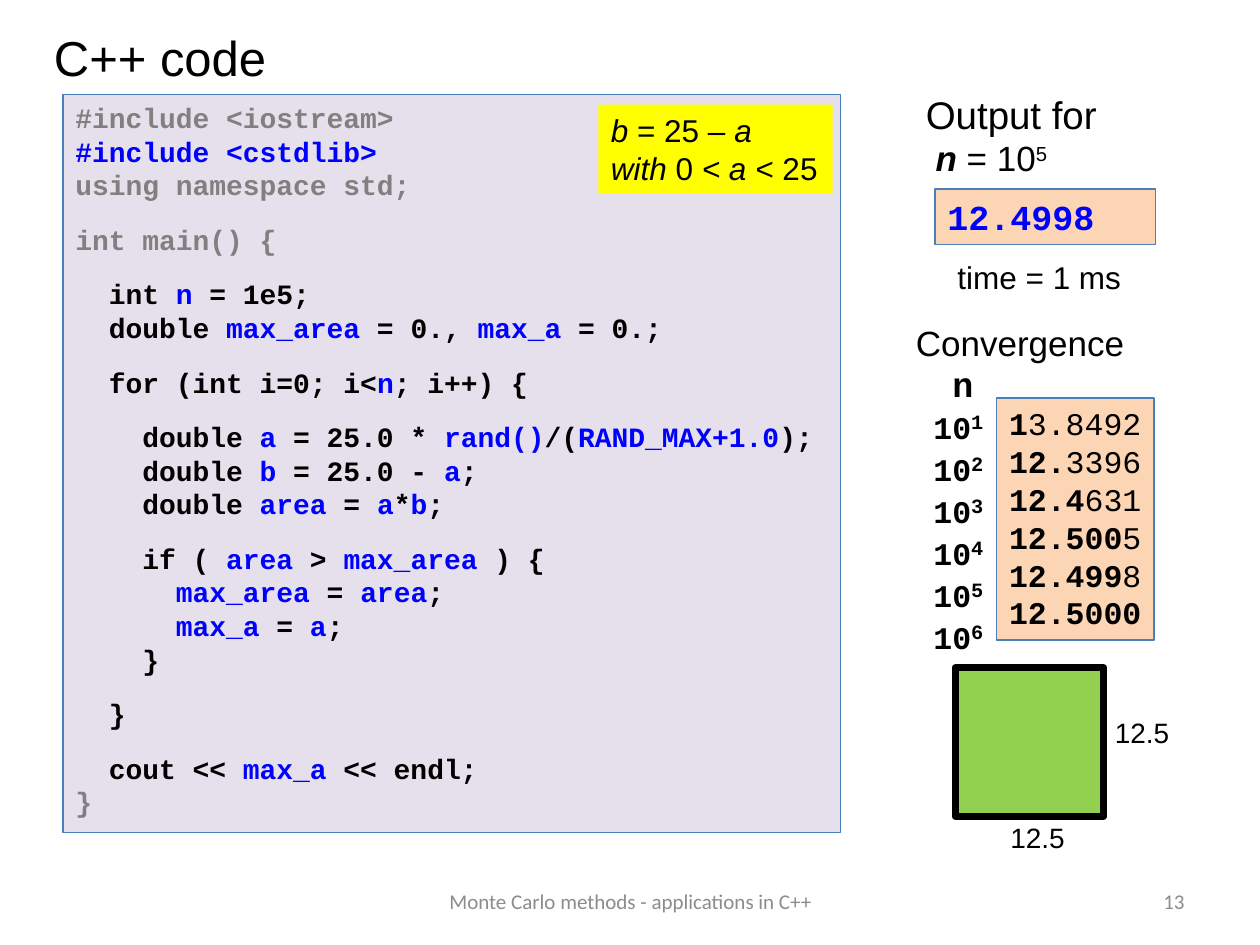
from pptx import Presentation
from pptx.dml.color import RGBColor
from pptx.enum.shapes import MSO_SHAPE
from pptx.enum.text import MSO_ANCHOR, PP_ALIGN
from pptx.util import Inches, Pt

RECT = MSO_SHAPE.RECTANGLE
LEFT, CENTER, RIGHT = PP_ALIGN.LEFT, PP_ALIGN.CENTER, PP_ALIGN.RIGHT
TOP, MIDDLE = MSO_ANCHOR.TOP, MSO_ANCHOR.MIDDLE
SANS, MONO, FOOTER = "Arial", "Courier New", "Calibri"
BLACK, BLUE, GREY, EDGE = "000000", "0000FF", "808080", "4B7EBC"

CODE_BLOCKS = [
    ["#include <iostream>", "|#include <cstdlib>", "using namespace std;"],
    ["int main() {"],
    ["  int |n| = 1e5;", "  double |max_area| = 0., |max_a| = 0.;"],
    ["  for (int i=0; i<|n|; i++) {"],
    [
        "    double |a| = 25.0 * |rand()|/(|RAND_MAX+1.0|);",
        "    double |b| = 25.0 - |a|;",
        "    double |area| = |a|*|b|;",
    ],
    [
        "    if ( |area| > |max_area| ) {",
        "      |max_area| = |area|;",
        "      |max_a| = |a|;",
        "    }",
    ],
    ["  }"],
    ["  cout << |max_a| << endl;", "}"],
]
GREY_LINES = {"#include <iostream>", "using namespace std;", "int main() {", "}"}
ESTIMATES = [("1", "3.8492"), ("12.", "3396"), ("12.4", "631"),
             ("12.500", "5"), ("12.499", "8"), ("12.5000", "")]


def color(hex_value):
    return RGBColor.from_string(hex_value)


def add_box(s, at, fill, line=None, width=0.75):
    sp = s.shapes.add_shape(RECT, *[Inches(v) for v in at])
    sp.shadow.inherit = False
    sp.fill.solid()
    sp.fill.fore_color.rgb = color(fill)
    if line:
        sp.line.color.rgb = color(line)
        sp.line.width = Pt(width)
    else:
        sp.line.fill.background()
    return sp


def set_frame(sp, wrap=True, anchor=TOP):
    tf = sp.text_frame
    tf.word_wrap = wrap
    tf.vertical_anchor = anchor
    return tf


def add_text(s, at, wrap=True, anchor=TOP):
    return set_frame(s.shapes.add_textbox(*[Inches(v) for v in at]), wrap, anchor)


def next_paragraph(tf, align=LEFT):
    first = tf.paragraphs[0]
    p = tf.add_paragraph() if first.runs else first
    p.alignment = align
    return p


def add_run(p, text, size, font=SANS, hex_value=BLACK, bold=False, italic=False):
    r = p.add_run()
    r.text = text
    r.font.size = Pt(size)
    r.font.name = font
    r.font.color.rgb = color(hex_value)
    r.font.bold = bold
    r.font.italic = italic
    return r


def add_superscript(p, text, size, **style):
    r = add_run(p, text, size, **style)
    r.font._element.set("baseline", "30000")


def add_label(s, at, text, size, font=SANS, hex_value=BLACK, align=LEFT,
              wrap=True, anchor=TOP):
    p = next_paragraph(add_text(s, at, wrap, anchor), align)
    add_run(p, text, size, font, hex_value)


def add_code(s):
    tf = set_frame(add_box(s, (0.5, 0.75, 6.17, 5.86), "E6E0EC", EDGE))
    for b, block in enumerate(CODE_BLOCKS):
        for i, line in enumerate(block):
            p = next_paragraph(tf)
            if b and i == 0:
                p.space_before = Pt(12)
            plain = GREY if line in GREY_LINES else BLACK
            for k, part in enumerate(line.split("|")):
                if part:
                    add_run(p, part, 16, MONO, BLUE if k % 2 else plain, True)


def add_output(s):
    tf = add_text(s, (7.25, 0.67, 1.67, 0.81))
    add_run(next_paragraph(tf), "Output for", 22)
    p = next_paragraph(tf)
    add_run(p, " ", 20)
    add_run(p, "n", 20, bold=True, italic=True)
    add_run(p, " = 10", 20)
    add_superscript(p, "5", 20)
    tf = set_frame(add_box(s, (7.42, 1.5, 1.75, 0.44), "FCD5B5", EDGE))
    add_run(next_paragraph(tf), "12.4998", 20, MONO, BLUE, True)
    add_label(s, (7.5, 2, 1.75, 0.4), "time = 1 ms", 18)


def add_convergence(s):
    add_label(s, (7.17, 2.5, 2, 0.44), "Convergence", 20)
    values = set_frame(add_box(s, (7.91, 3.16, 1.25, 1.92), "FCD5B5", EDGE))
    powers = add_text(s, (7.31, 2.83, 0.75, 2.26))
    p = next_paragraph(powers)
    add_run(p, " ", 18, MONO, bold=True)
    add_run(p, "n", 20, MONO, bold=True)
    for power, (settled, rest) in enumerate(ESTIMATES, 1):
        p = next_paragraph(powers)
        add_run(p, "10", 18, MONO, bold=True)
        add_superscript(p, str(power), 20, font=MONO, bold=True)
        p = next_paragraph(values)
        add_run(p, settled, 18, MONO, bold=True)
        if rest:
            add_run(p, rest, 18, MONO)


def add_square(s):
    add_box(s, (7.58, 5.3, 1.18, 1.18), "92D050", BLACK, 4)
    for left, top in [(8.75, 5.63), (7.92, 6.46)]:
        add_label(s, (left, top, 0.64, 0.37), "12.5", 16, wrap=False)


def add_constraint(s):
    tf = set_frame(add_box(s, (4.75, 0.83, 1.86, 0.71), "FFFF00"), wrap=False)
    for line in ["|b| = 25 – |a", "|with |0| < a < |25"]:
        p = next_paragraph(tf)
        for k, part in enumerate(line.split("|")):
            if part:
                add_run(p, part, 18, italic=k % 2 == 1)


def add_footer(s):
    add_label(s, (3.42, 6.95, 3.17, 0.4), "Monte Carlo methods - applications in C++",
              12, FOOTER, "8C8C8C", CENTER, anchor=MIDDLE)
    add_label(s, (7.17, 6.95, 2.33, 0.4), "13", 12, FOOTER, "8C8C8C", RIGHT,
              anchor=MIDDLE)


def main():
    prs = Presentation()
    prs.slide_width, prs.slide_height = Inches(10), Inches(7.5)
    s = prs.slides.add_slide(prs.slide_layouts[6])
    add_label(s, (0.33, 0.17, 1.92, 0.57), "C++ code", 28)
    add_footer(s)
    add_code(s)
    add_output(s)
    add_convergence(s)
    add_square(s)
    add_constraint(s)
    prs.save("out.pptx")


if __name__ == "__main__":
    main()
